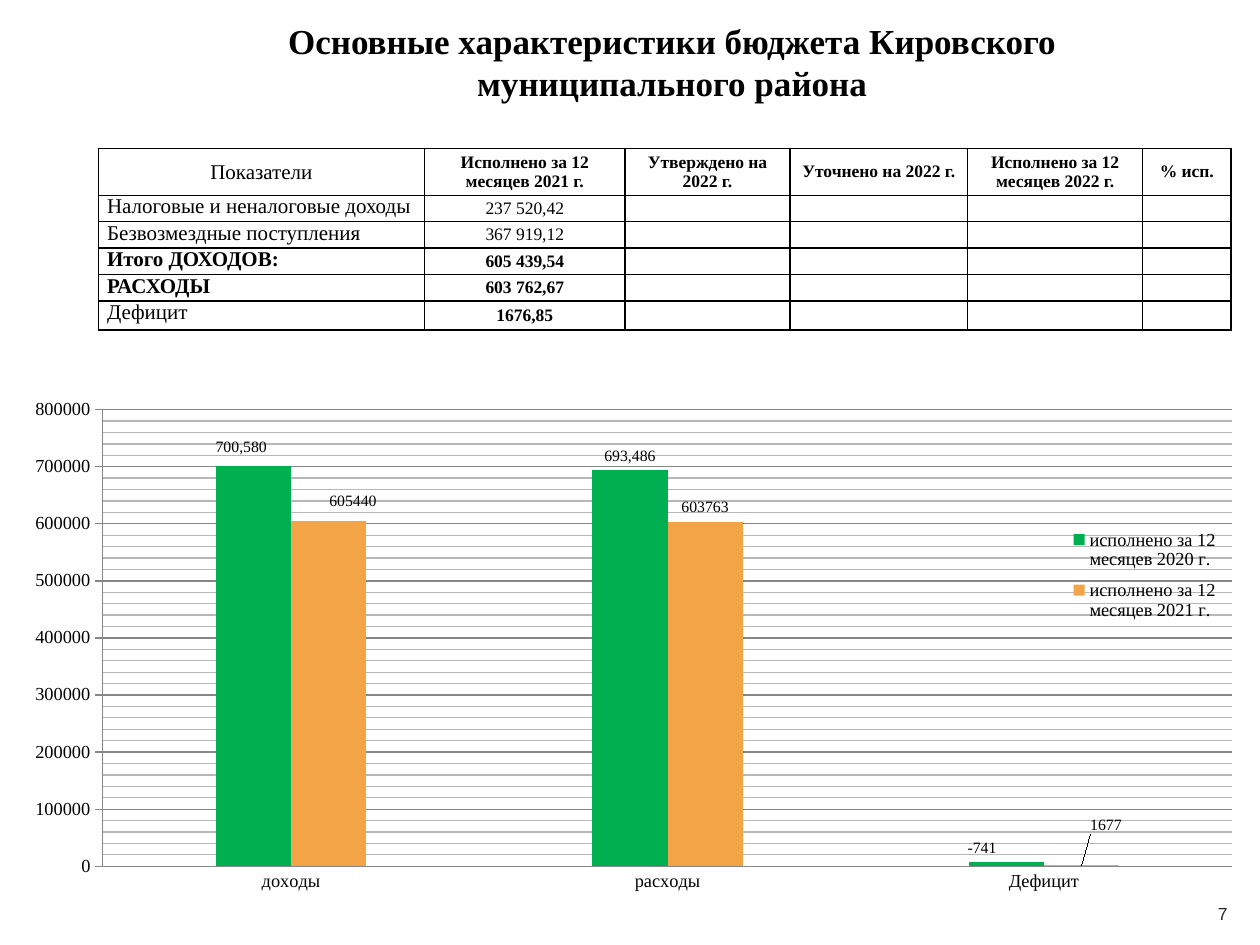
from dataclasses import dataclass
from lxml.etree import SubElement
from pptx import Presentation
from pptx.chart.data import CategoryChartData
from pptx.dml.color import RGBColor
from pptx.enum.chart import XL_CHART_TYPE as ChartType, XL_LABEL_POSITION as LabelPosition
from pptx.enum.chart import XL_LEGEND_POSITION as LegendPosition, XL_TICK_MARK as TickMark
from pptx.enum.text import MSO_ANCHOR as Anchor, PP_ALIGN as Align
from pptx.oxml import parse_xml
from pptx.oxml.ns import nsdecls, qn
from pptx.util import Inches, Pt

BLACK = RGBColor(0x00, 0x00, 0x00)
DARK = RGBColor(0x26, 0x26, 0x26)
GRID = RGBColor(0x86, 0x86, 0x86)
GREEN = RGBColor(0x00, 0xB0, 0x50)
ORANGE = RGBColor(0xF3, 0xA4, 0x47)
SERIF = "Times New Roman"
WIDTH, HEIGHT = Inches(10), Inches(7.5)


@dataclass
class Row:
    title: str
    value: str
    bold_title: bool = False
    bold_value: bool = False


@dataclass
class BarSeries:
    name: str
    values: tuple
    color: RGBColor
    number_format: str
    label_shifts: tuple  # (x, y) of each label, as shares of the chart


HEADERS = ("Показатели", "Исполнено за 12 месяцев 2021 г.", "Утверждено на 2022 г.",
           "Уточнено на 2022 г.", "Исполнено за 12 месяцев 2022 г.", "% исп.")
COLUMN_WIDTHS = (2.59, 1.59, 1.31, 1.41, 1.39, 0.7)
ROW_HEIGHTS = (0.37, 0.21, 0.21, 0.21, 0.21, 0.23)
ROWS = (
    Row("Налоговые и неналоговые доходы", "237 520,42"),
    Row("Безвозмездные поступления", "367 919,12"),
    Row("Итого ДОХОДОВ:", "605 439,54", True, True),
    Row("РАСХОДЫ", "603 762,67", True, True),
    Row("Дефицит", "1676,85", False, True),
)
CATEGORIES = ("доходы", "расходы", "Дефицит")
SERIES = (
    BarSeries("исполнено за 12 месяцев 2020 г.", (700580, 693486, 7093), GREEN, "#,##0",
              ((-0.01, -0.01), (0, 0), (-0.02, 0))),
    BarSeries("исполнено за 12 месяцев 2021 г.", (605440, 603763, 1677), ORANGE, "0",
              ((0.02, -0.01), (0, 0), (0.02, -0.05))),
)


def style_font(font, size: float, bold: bool = False, name: str = SERIF,
               color: RGBColor = BLACK) -> None:
    for key, value in {"size": Pt(size), "bold": bold, "name": name}.items():
        setattr(font, key, value)
    font.color.rgb = color


def write(frame, text: str, size: float, align=Align.CENTER, **font_format) -> None:
    para = frame.paragraphs[0]
    para.alignment = align
    span = para.add_run()
    span.text = text
    style_font(span.font, size, **font_format)


def layout_xml(target: str = "", **shares: float):
    modes = "".join(f'<c:{side}Mode val="edge"/>' for side in "xy") if target else ""
    inner = '<c:layoutTarget val="inner"/>' if target == "inner" else ""
    sizes = "".join(f'<c:{key} val="{value}"/>' for key, value in shares.items())
    return parse_xml(f'<c:layout {nsdecls("c")}><c:manualLayout>{inner}{modes}{sizes}'
                     '</c:manualLayout></c:layout>')


def draw_borders(cell) -> None:
    properties = cell._tc.get_or_add_tcPr()
    for position, side in enumerate(("lnL", "lnR", "lnT", "lnB")):
        properties.insert(position, parse_xml(
            f'<a:{side} {nsdecls("a")} w="12700"><a:solidFill><a:srgbClr val="{BLACK}"/>'
            f'</a:solidFill></a:{side}>'))


def add_budget_table(page) -> None:
    table = page.shapes.add_table(len(ROW_HEIGHTS), len(COLUMN_WIDTHS), Inches(0.78),
                                  Inches(1.18), Inches(9), Inches(1.46)).table
    table.first_row = table.horz_banding = False
    for column, width in zip(table.columns, COLUMN_WIDTHS):
        column.width = Inches(width)
    for row, height in zip(table.rows, ROW_HEIGHTS):
        row.height = Inches(height)
    cell_format = {"margin_left": Inches(0.07), "margin_right": Inches(0.07),
                   "margin_top": 0, "margin_bottom": 0, "vertical_anchor": Anchor.MIDDLE}
    for cell in table.iter_cells():
        for key, value in cell_format.items():
            setattr(cell, key, value)
        cell.fill.background()
        draw_borders(cell)
    for index, text in enumerate(HEADERS):
        write(table.cell(0, index).text_frame, text, 10 if index else 12, bold=index > 0)
    for index, row in enumerate(ROWS, start=1):
        title = table.cell(index, 0)
        title.vertical_anchor = Anchor.TOP
        write(title.text_frame, row.title, 12, Align.JUSTIFY, bold=row.bold_title)
        write(table.cell(index, 1).text_frame, row.value, 10, bold=row.bold_value)
        for column in range(2, len(HEADERS)):
            para = table.cell(index, column).text_frame.paragraphs[0]
            SubElement(para._p, qn("a:endParaRPr"), sz="1000")


def style_series(plot_series, bars: BarSeries) -> None:
    fill = plot_series.format.fill
    fill.solid()
    fill.fore_color.rgb = bars.color
    plot_series.invert_if_negative = False
    labels = plot_series.data_labels
    for key, value in {"show_value": True, "number_format": bars.number_format,
                       "number_format_is_linked": False,
                       "position": LabelPosition.OUTSIDE_END}.items():
        setattr(labels, key, value)
    style_font(labels.font, 9)
    for index, (x, y) in enumerate(bars.label_shifts):
        label = plot_series.points[index].data_label
        if bars.values[index] == 7093:
            write(label.text_frame, "-741", 9)
        else:
            style_font(label.font, 9)
        label.position = LabelPosition.OUTSIDE_END
        mark = labels._element.findall(qn("c:dLbl"))[index].find(qn("c:idx"))
        if bars.values[index] != 7093:
            mark.addnext(parse_xml(f'<c:numFmt {nsdecls("c")} '
                                   f'formatCode="{bars.number_format}" sourceLinked="0"/>'))
        if x or y:
            mark.addnext(layout_xml(x=x, y=y))


def add_budget_chart(page) -> None:
    data = CategoryChartData()
    data.categories = CATEGORIES
    for bars in SERIES:
        data.add_series(bars.name, bars.values)
    chart = page.shapes.add_chart(ChartType.COLUMN_CLUSTERED, Inches(0.15), Inches(3.11),
                                  Inches(9.66), Inches(4.05), data).chart
    chart.has_title = False
    style_font(chart.font, 10.5)
    plot = chart.plots[0]
    for key, value in {"gap_width": 300, "overlap": 0, "vary_by_categories": False}.items():
        setattr(plot, key, value)
    for plot_series, bars in zip(plot.series, SERIES):
        style_series(plot_series, bars)

    axis = chart.value_axis
    for key, value in {"minimum_scale": 0, "maximum_scale": 800000, "major_unit": 100000,
                       "minor_unit": 20000, "has_major_gridlines": True,
                       "has_minor_gridlines": True,
                       "major_tick_mark": TickMark.OUTSIDE}.items():
        setattr(axis, key, value)
    axis.tick_labels.number_format = "General"
    axis.tick_labels.number_format_is_linked = False
    chart.category_axis.major_tick_mark = TickMark.NONE
    for part in (axis, chart.category_axis, axis.major_gridlines):
        part.format.line.color.rgb = GRID
        part.format.line.width = Pt(0.75)

    chart.has_legend = True
    legend = chart.legend
    legend.position = LegendPosition.RIGHT
    legend.include_in_layout = False
    style_font(legend.font, 10.5)
    area = chart._chartSpace.chart.plotArea
    for old in area.findall(qn("c:layout")) + legend._element.findall(qn("c:layout")):
        old.getparent().remove(old)
    area.insert(0, layout_xml("inner", x=0.069, y=0.035, w=0.928, h=0.895))
    legend._element.find(qn("c:legendPos")).addnext(
        layout_xml("outer", x=0.86, y=0.25, w=0.13, h=0.22))


def main() -> None:
    deck = Presentation()
    deck.slide_width, deck.slide_height = WIDTH, HEIGHT
    page = deck.slides.add_slide(deck.slide_layouts[5])
    add_budget_chart(page)

    number = page.shapes.add_textbox(Inches(9.45), Inches(7.05), Inches(0.51), Inches(0.4))
    number.text_frame.word_wrap = True
    number.text_frame.vertical_anchor = Anchor.MIDDLE
    write(number.text_frame, "7", 10, name="Arial", color=DARK)

    title = page.shapes.title
    for key, value in {"left": 1.21, "top": 0, "width": 8.25, "height": 0.97}.items():
        setattr(title, key, Inches(value))
    title.text_frame.vertical_anchor = Anchor.MIDDLE
    write(title.text_frame, "Основные характеристики бюджета Кировского муниципального района",
          20, bold=True)
    add_budget_table(page)
    deck.save("out.pptx")


if __name__ == "__main__":
    main()
